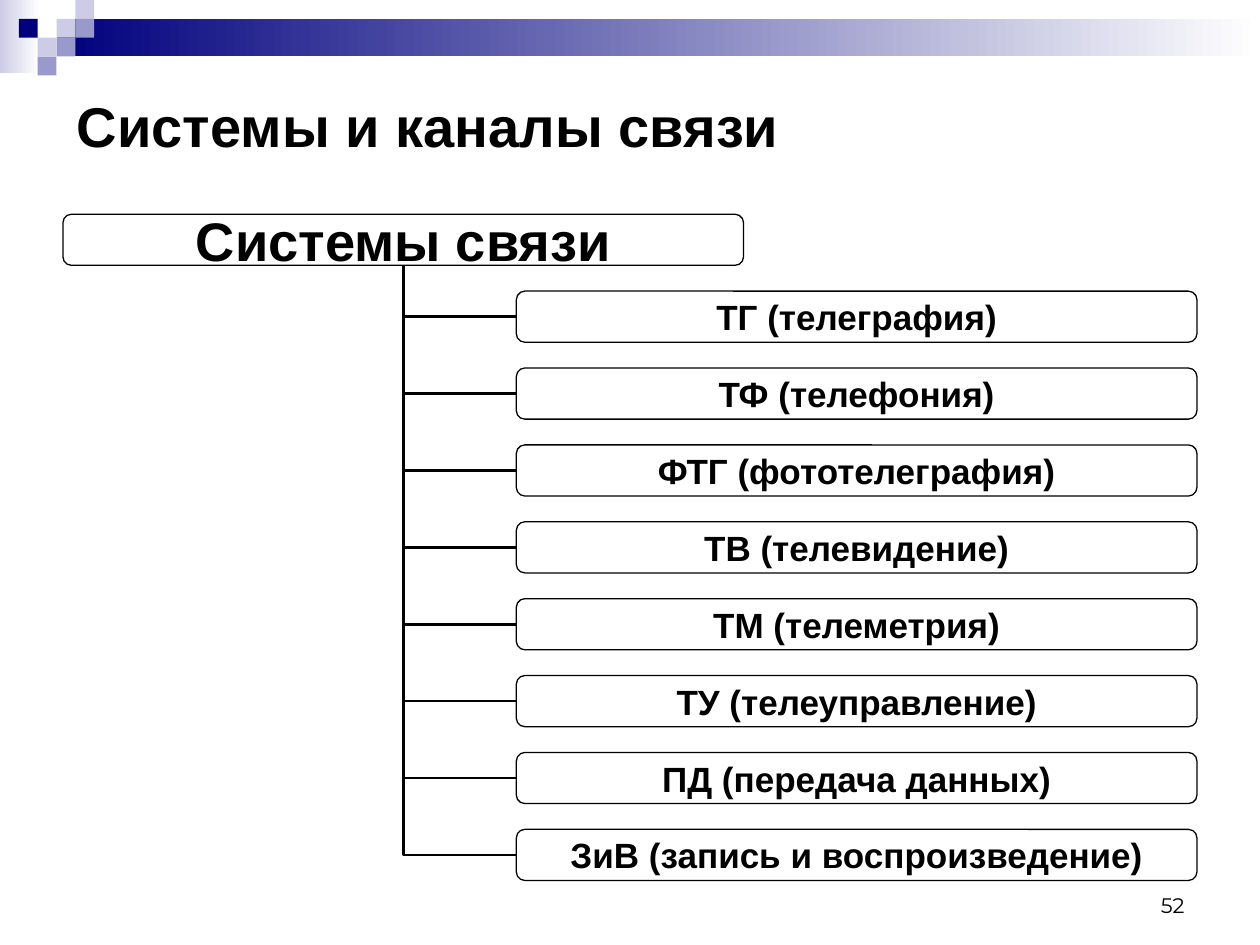
from typing import NamedTuple

from pptx import Presentation
from pptx.dml.color import RGBColor
from pptx.enum.shapes import MSO_CONNECTOR, MSO_SHAPE
from pptx.enum.text import MSO_ANCHOR as Anchor, PP_ALIGN as Align
from pptx.oxml.ns import qn
from pptx.util import Cm, Pt
from lxml.etree import SubElement

COLORS = {
    "navy": "00007D",
    "violet": "9999CC",
    "lavender": "CCCCE6",
    "white": "FFFFFF",
    "black": "000000",
}

CELL = 0.38  # side of a decorative square, cm
BOX_WIDTH, BOX_HEIGHT = 13.72, 1.03
ROOT_LEFT, ROOT_TOP = 1.27, 4.32
CHILD_LEFT, BOX_STEP = 10.41, 1.55
BOTTOM_SITE, LEFT_SITE = 2, 1


class Area(NamedTuple):
    left: float
    top: float
    width: float
    height: float

    def lengths(self) -> list:
        return [Cm(value) for value in self]


class TextStyle(NamedTuple):
    size: float
    font: str = "Arial"
    bold: bool = True
    align: Align = Align.CENTER
    anchor: Anchor = Anchor.MIDDLE


class Square(NamedTuple):
    column: int
    row: int
    color: str


GRADIENTS = [
    (Area(0, 0, 0.79, 1.47), "lavender"),
    (Area(1.14, CELL, 24.26, 0.76), "navy"),
]
SQUARES = [
    Square(3, 1, "lavender"),
    Square(4, 0, "lavender"),
    Square(4, 1, "violet"),
    Square(2, 2, "lavender"),
    Square(1, 1, "navy"),
    Square(3, 2, "violet"),
    Square(2, 3, "violet"),
]
SYSTEMS = [
    "ТГ (телеграфия)",
    "ТФ (телефония)",
    "ФТГ (фототелеграфия)",
    "ТВ (телевидение)",
    "ТМ (телеметрия)",
    "ТУ (телеуправление)",
    "ПД (передача данных)",
    "ЗиВ (запись и воспроизведение)",
]


def color(name: str) -> RGBColor:
    return RGBColor.from_string(COLORS[name])


def write(shape, text: str, style: TextStyle) -> None:
    frame = shape.text_frame
    frame.text = text
    frame.vertical_anchor = style.anchor
    para = frame.paragraphs[0]
    para.alignment = style.align
    font = para.runs[0].font
    font.name, font.size, font.bold = style.font, Pt(style.size), style.bold
    font.color.rgb = color("black")


def add_text(page, area: Area, text: str, style: TextStyle) -> None:
    box = page.shapes.add_textbox(*area.lengths())
    box.text_frame.word_wrap = True
    write(box, text, style)


def add_rectangle(page, area: Area):
    shape = page.shapes.add_shape(MSO_SHAPE.RECTANGLE, *area.lengths())
    shape.shadow.inherit = False
    shape.line.fill.background()
    return shape


def add_fade(page, area: Area, start: str) -> None:
    """Add a rectangle that fades to white from left to right."""
    fill = add_rectangle(page, area).fill
    fill.gradient()
    fill.gradient_angle = 0
    for stop, name in zip(fill.gradient_stops, (start, "white")):
        stop.color.rgb = color(name)


def add_square(page, square: Square) -> None:
    area = Area(square.column * CELL, square.row * CELL, CELL, CELL)
    fill = add_rectangle(page, area).fill
    fill.solid()
    fill.fore_color.rgb = color(square.color)


def add_box(page, left: float, top: float, text: str, size: float):
    area = Area(left, top, BOX_WIDTH, BOX_HEIGHT)
    box = page.shapes.add_shape(MSO_SHAPE.ROUNDED_RECTANGLE, *area.lengths())
    box.shadow.inherit = False
    box.fill.background()
    box.line.color.rgb = color("black")
    box.line.width = Pt(0.75)
    frame = box.text_frame
    frame.margin_left = frame.margin_right = 0
    frame.margin_top = frame.margin_bottom = 0
    frame.word_wrap = False
    write(box, text, TextStyle(size))
    return box


def add_branch(page, child, root) -> None:
    """Join a child's left side to the root's bottom with a single bend."""
    branch = page.shapes.add_connector(MSO_CONNECTOR.ELBOW, 0, 0, 0, 0)
    branch.begin_connect(child, LEFT_SITE)
    branch.end_connect(root, BOTTOM_SITE)
    branch.line.color.rgb = color("black")
    branch.line.width = Pt(1.5)
    properties = branch._element.spPr
    properties.find(qn("a:prstGeom")).set("prst", "bentConnector2")
    SubElement(properties, qn("a:effectLst"))


def main() -> None:
    deck = Presentation()
    deck.slide_width, deck.slide_height = Cm(25.4), Cm(19.05)
    page = deck.slides.add_slide(deck.slide_layouts[6])

    for area, start in GRADIENTS:
        add_fade(page, area, start)
    for square in SQUARES:
        add_square(page, square)

    add_text(page, Area(1.3, 1.32, 22.86, 2.41), "Системы и каналы связи",
             TextStyle(32, align=Align.LEFT))

    root = add_box(page, ROOT_LEFT, ROOT_TOP, "Системы связи", 31)
    for number, system in enumerate(SYSTEMS, start=1):
        child = add_box(page, CHILD_LEFT, ROOT_TOP + number * BOX_STEP, system, 20)
        add_branch(page, child, root)

    add_text(page, Area(18.21, 17.35, 5.92, 1.27), "52",
             TextStyle(12, "Montserrat", False, Align.RIGHT, Anchor.BOTTOM))

    deck.save("out.pptx")


if __name__ == "__main__":
    main()
